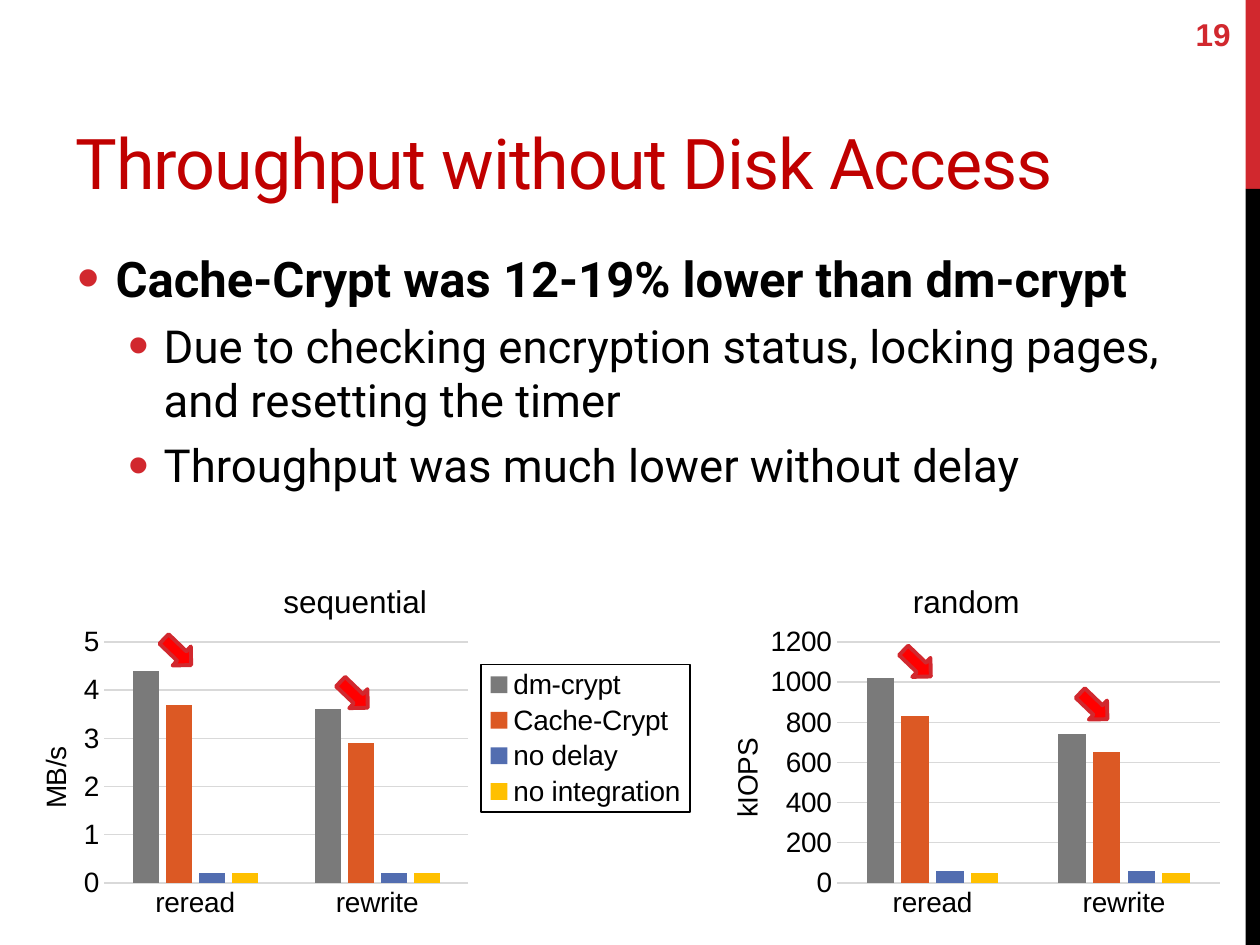
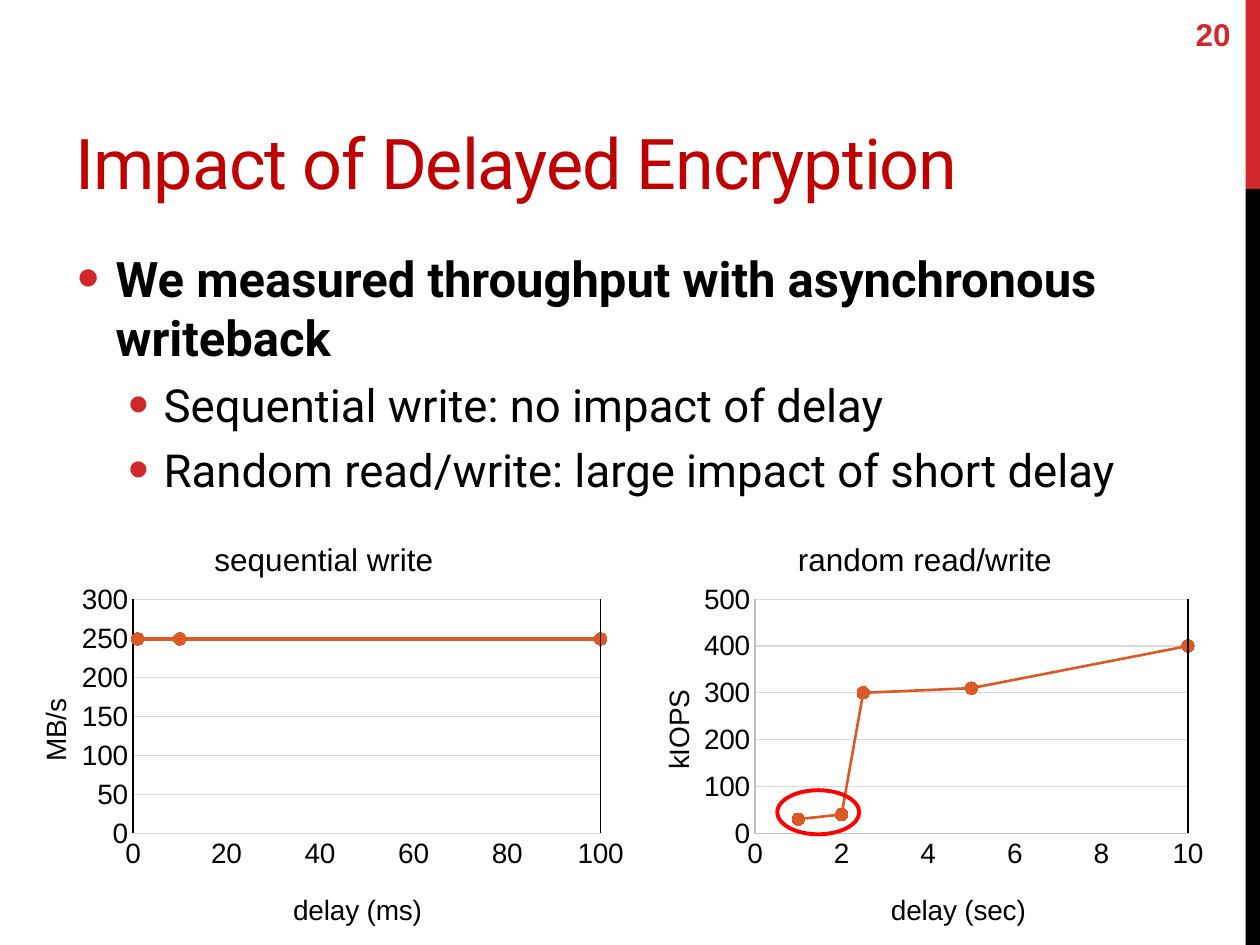
from pptx import Presentation
from pptx.chart.data import CategoryChartData, XyChartData
from pptx.dml.color import RGBColor
from pptx.enum.chart import XL_CHART_TYPE as CT, XL_LEGEND_POSITION as LP
from pptx.enum.chart import XL_MARKER_STYLE as MS, XL_TICK_MARK as TM
from pptx.enum.shapes import MSO_CONNECTOR as CONN, MSO_SHAPE as SHAPE
from pptx.enum.text import MSO_ANCHOR as ANCHOR, MSO_AUTO_SIZE as AUTO, PP_ALIGN as ALIGN
from pptx.oxml import parse_xml
from pptx.oxml.ns import nsdecls, qn
from pptx.util import Cm, Pt

C = {
    "band": "D1282E", "title": "C00000", "black": "000000", "mark": "FF0000",
    "grid": "D9D9D9", "axis": "BFBFBF", "grey": "7A7A7A", "orange": "DC5924",
    "blue": "526DB0", "yellow": "FFC000",
}
BAR_COLORS = ["grey", "orange", "blue", "yellow"]
BAR_NAMES = ["dm-crypt", "Cache-Crypt", "no delay", "no integration"]
BAR_CATS = ["reread", "rewrite"]
BANDS = [(0, 3.81, "band"), (3.81, 15.24, "black")]
TITLE_BOX = (1.27, 0.43, 22.91, 3.81)
BODY_BOX = (1.27, 4.88, 22.91, 13.16)
NUMBER_BOX = (23.16, 0.18, 1.9, 1.02)
LEVELS = [dict(size=28, bold=True, left=0.76, hang=0.76),
          dict(size=26, bold=False, left=1.73, hang=0.71)]

SLIDES = [
    dict(
        number="19", title="Throughput without Disk Access",
        body=[(0, "Cache-Crypt was 12-19% lower than dm-crypt"),
              (1, "Due to checking encryption status, locking pages, and resetting the timer"),
              (1, "Throughput was much lower without delay")],
        charts=[
            dict(box=(0, 11.1, 14.12, 7.54), plot=(2.1, 12.94, 7.34, 4.86),
                 title=("sequential", 5.6, 11.6), y=("MB/s", 0.66, 14.94),
                 top=5, step=1, legend=(9.7, 13.39, 4.21, 2.98),
                 bars=[(4.4, 3.6), (3.7, 2.9), (0.2, 0.2), (0.2, 0.2)]),
            dict(box=(13.92, 11.1, 10.9, 7.54), plot=(16.87, 12.94, 7.72, 4.86),
                 title=("random", 18.29, 11.6), y=("kIOPS", 14.6, 14.78),
                 top=1200, step=200,
                 bars=[(1020, 740), (830, 650), (60, 60), (50, 50)]),
        ],
        arrows=[(3.2, 12.88), (6.76, 13.74), (18.11, 13.11), (21.67, 13.97)],
    ),
    dict(
        number="20", title="Impact of Delayed Encryption",
        body=[(0, "We measured throughput with asynchronous writeback"),
              (1, "Sequential write: no impact of delay"),
              (1, "Random read/write: large impact of short delay")],
        charts=[
            dict(box=(0, 10.19, 12.83, 8.86), plot=(2.68, 12.08, 9.43, 4.72),
                 title=("sequential write", 4.21, 10.74), y=("MB/s", 0.66, 13.99),
                 x=("delay (ms)", 5.81, 17.88), top=300, step=50, x_top=100, x_step=20,
                 x_line="grid", y_line="black", width=2.25,
                 points=[(1, 249), (10, 249), (100, 249)]),
            dict(box=(12.57, 10.19, 11.94, 8.86), plot=(15.22, 12.08, 8.73, 4.72),
                 title=("random read/write", 15.97, 10.74), y=("kIOPS", 13.22, 13.81),
                 x=("delay (sec)", 17.86, 17.88), top=500, step=100, x_top=10, x_step=2,
                 x_line="axis", y_line="axis", width=1.5,
                 points=[(1, 30), (2, 40), (2.5, 300), (5, 310), (10, 400)]),
        ],
        ellipses=[(15.67, 15.93, 1.65, 0.89)],
    ),
]


def rgb(name):
    return RGBColor.from_string(C[name])


def cm(box):
    return [Cm(v) for v in box]


def style(font, size, color="black", bold=False, name="Arial"):
    font.size, font.bold, font.name = Pt(size), bold, name
    font.color.rgb = rgb(color)


def write(p, text, align=ALIGN.LEFT, spacing=None, **fmt):
    p.alignment = align
    r = p.add_run()
    r.text = text
    style(r.font, **fmt)
    if spacing is not None:
        r.font._element.set("spc", str(spacing))


def line(fmt, color, width=0.75):
    if color:
        fmt.color.rgb = rgb(color)
        fmt.width = Pt(width)
    else:
        fmt.fill.background()


def add_shape(s, kind, box, fill=None, outline=None, rotation=0):
    sp = s.shapes.add_shape(kind, *cm(box))
    sp.shadow.inherit = False
    sp.rotation = rotation
    if fill:
        sp.fill.solid()
        sp.fill.fore_color.rgb = rgb(fill)
    else:
        sp.fill.background()
    line(sp.line, outline, 2.25)
    return sp


def add_bands(prs, s):
    first = prs.slide_master.shapes[0].element
    for i, (top, height, color) in enumerate(BANDS):
        el = add_shape(s, SHAPE.RECTANGLE, (25.11, top, 0.29, height), color).element
        el.xpath(".//p:cNvPr")[0].set("id", str(100 + i))
        first.addprevious(el)


def place(sp, box, anchor):
    sp.left, sp.top, sp.width, sp.height = cm(box)
    tf = sp.text_frame
    tf.word_wrap, tf.auto_size, tf.vertical_anchor = True, AUTO.NONE, anchor
    return tf


def bullet(p, left, hang):
    p.space_before = Pt(6)
    pPr = p._p.get_or_add_pPr()
    pPr.set("marL", str(Cm(left)))
    pPr.set("indent", str(-Cm(hang)))
    for xml in (f'<a:buClr {nsdecls("a")}><a:srgbClr val="{C["band"]}"/></a:buClr>',
                f'<a:buSzPct {nsdecls("a")} val="130000"/>',
                f'<a:buFont {nsdecls("a")} typeface="Arial"/>',
                f'<a:buChar {nsdecls("a")} char="•"/>'):
        pPr.append(parse_xml(xml))


def add_text(s, d):
    tf = place(s.shapes.title, TITLE_BOX, ANCHOR.BOTTOM)
    write(tf.paragraphs[0], d["title"], size=40, color="title", name="Roboto", spacing=-60)
    tf = place(s.placeholders[1], BODY_BOX, ANCHOR.TOP)
    tf.margin_left = tf.margin_right = Cm(0.3)
    for i, (level, text) in enumerate(d["body"]):
        p = tf.add_paragraph() if i else tf.paragraphs[0]
        p.level = level
        f = LEVELS[level]
        bullet(p, f["left"], f["hang"])
        write(p, text, size=f["size"], bold=f["bold"], name="Roboto")
    tf = place(s.shapes.add_textbox(*cm(NUMBER_BOX)), NUMBER_BOX, ANCHOR.MIDDLE)
    write(tf.paragraphs[0], d["number"], ALIGN.RIGHT, size=18, color="band", bold=True)


def set_layout(el, chart_box, part, index=1, inner=False):
    for old in el.findall(qn("c:layout")):
        el.remove(old)
    left, top, width, height = chart_box
    values = [(part[0] - left) / width, (part[1] - top) / height]
    values += [v / full for v, full in zip(part[2:], (width, height))]
    tags = '<c:layoutTarget val="inner"/>' if inner else ""
    tags += '<c:xMode val="edge"/><c:yMode val="edge"/>'
    tags += "".join(f'<c:{k} val="{v:.4f}"/>' for k, v in zip("xywh", values))
    el.insert(index, parse_xml(
        f'<c:layout {nsdecls("c")}><c:manualLayout>{tags}</c:manualLayout></c:layout>'))


def set_title(title, chart_box, text, left, top, size=16):
    write(title.text_frame.paragraphs[0], text, ALIGN.CENTER, size=size)
    set_layout(title.element, chart_box, (left, top))


def format_axis(axis, color):
    axis.major_tick_mark = axis.minor_tick_mark = TM.NONE
    axis.has_major_gridlines = False
    style(axis.tick_labels.font, 16)
    line(axis.format.line, color)


def scale(axis, top, step):
    axis.minimum_scale, axis.maximum_scale, axis.major_unit = 0, top, step


def add_legend(chart, d):
    chart.has_legend = True
    legend = chart.legend
    legend.position = LP.RIGHT
    legend.include_in_layout = False
    style(legend.font, 16)
    el = chart.element.xpath(".//c:legend")[0]
    set_layout(el, d["box"], d["legend"])
    el.find(qn("c:overlay")).addnext(parse_xml(
        f'<c:spPr {nsdecls("c", "a")}><a:ln w="9525"><a:solidFill>'
        f'<a:srgbClr val="{C["black"]}"/></a:solidFill></a:ln></c:spPr>'))


def add_chart(s, d):
    if "bars" in d:
        kind, data = CT.COLUMN_CLUSTERED, CategoryChartData()
        data.categories = BAR_CATS
        for name, values in zip(BAR_NAMES, d["bars"]):
            data.add_series(name, values)
    else:
        kind, data = CT.XY_SCATTER_LINES, XyChartData()
        series = data.add_series(d["title"][0])
        for x, y in d["points"]:
            series.add_data_point(x, y)
    chart = s.shapes.add_chart(kind, *cm(d["box"]), data).chart
    style(chart.font, 16)
    chart.has_legend = False
    chart.has_title = True
    set_title(chart.chart_title, d["box"], *d["title"], size=18)
    format_axis(chart.category_axis, d.get("x_line", "grid"))
    format_axis(chart.value_axis, d.get("y_line"))
    scale(chart.value_axis, d["top"], d["step"])
    chart.value_axis.has_major_gridlines = True
    line(chart.value_axis.major_gridlines.format.line, "grid")
    set_title(chart.value_axis.axis_title, d["box"], *d["y"])
    set_layout(chart.element.xpath(".//c:plotArea")[0], d["box"], d["plot"], 0, True)
    plot = chart.plots[0]
    plot.vary_by_categories = False
    if "bars" in d:
        plot.gap_width, plot.overlap = 219, -27
        for series, color in zip(plot.series, BAR_COLORS):
            series.format.fill.solid()
            series.format.fill.fore_color.rgb = rgb(color)
    else:
        scale(chart.category_axis, d["x_top"], d["x_step"])
        set_title(chart.category_axis.axis_title, d["box"], *d["x"])
        format_points(plot.series[0], d["width"])
        add_right_edge(s, d["plot"])
    if "legend" in d:
        add_legend(chart, d)


def format_points(series, width):
    series.smooth = False
    line(series.format.line, "orange", width)
    marker = series.marker
    marker.style, marker.size = MS.CIRCLE, 7
    marker.format.fill.solid()
    marker.format.fill.fore_color.rgb = rgb("orange")
    line(marker.format.line, "orange")


def add_right_edge(s, plot):
    left, top, width, height = plot
    x = left + width
    edge = s.shapes.add_connector(CONN.STRAIGHT, *cm((x, top, x, top + height)))
    line(edge.line, "black")
    edge.element.spPr.append(parse_xml(f'<a:effectLst {nsdecls("a")}/>'))


def main():
    prs = Presentation()
    prs.slide_width, prs.slide_height = Cm(25.4), Cm(19.05)
    for i, d in enumerate(SLIDES):
        s = prs.slides.add_slide(prs.slide_layouts[1])
        if i == 0:
            add_bands(prs, s)
        add_text(s, d)
        for chart in d["charts"]:
            add_chart(s, chart)
        for left, top in d.get("arrows", []):
            add_shape(s, SHAPE.RIGHT_ARROW, (left, top, 0.76, 0.53), "mark", "band", 43.8)
        for box in d.get("ellipses", []):
            add_shape(s, SHAPE.OVAL, box, outline="mark")
    prs.save("out.pptx")


if __name__ == "__main__":
    main()
